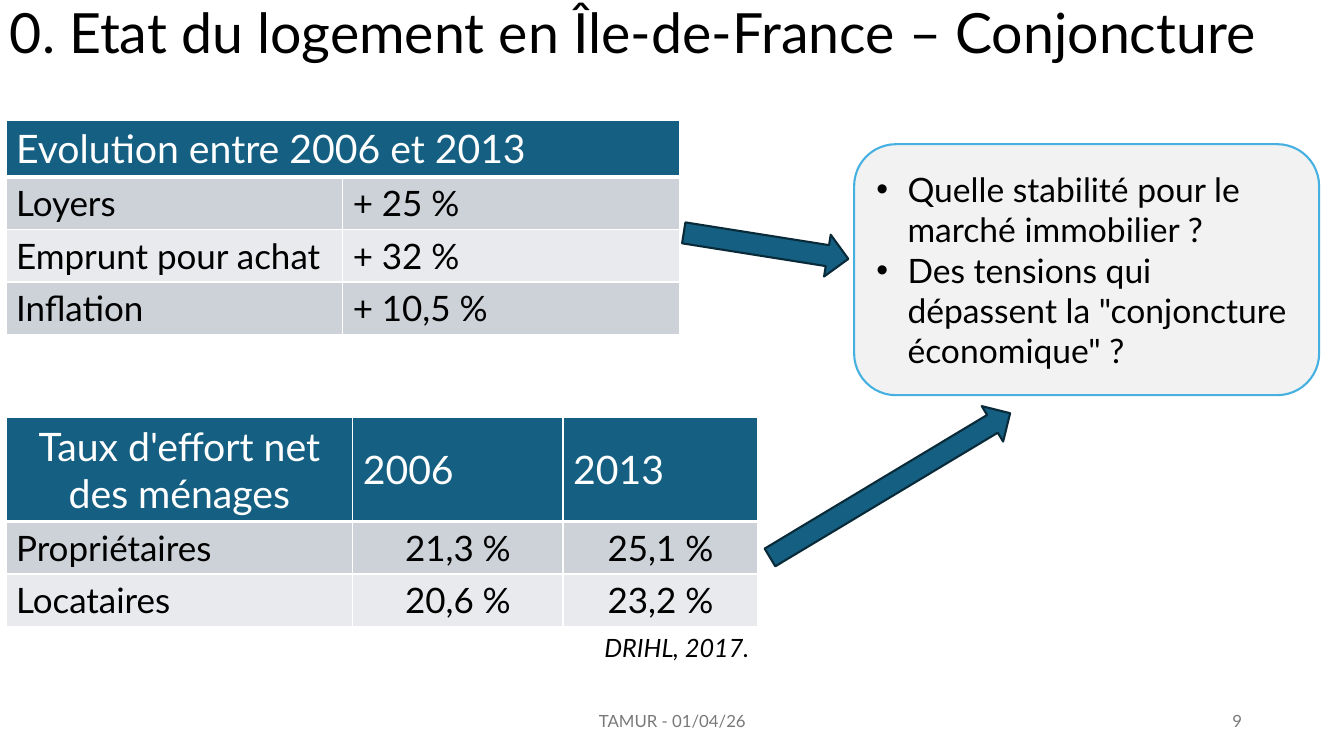
from lxml import etree
from pptx import Presentation
from pptx.dml.color import RGBColor
from pptx.enum import shapes, text
from pptx.oxml import ns
from pptx.util import Inches, Pt

COLORS = {
    "white": "FFFFFF", "black": "000000", "blue": "156082", "edge": "092A39",
    "dark_band": "CCD2D8", "light_band": "E8EAED", "grey": "797979",
    "panel": "F2F2F2", "sky": "46B1E1",
}
LEFT, CENTER, RIGHT = text.PP_ALIGN.LEFT, text.PP_ALIGN.CENTER, text.PP_ALIGN.RIGHT
TOP, MIDDLE = text.MSO_ANCHOR.TOP, text.MSO_ANCHOR.MIDDLE

deck = Presentation()
deck.slide_width, deck.slide_height = Inches(13.33), Inches(7.5)
page = deck.slides.add_slide(deck.slide_layouts[6])


def place(left, top, width, height):
    across, down = deck.slide_width / 100, deck.slide_height / 100
    return [int(share * side) for share, side in
            zip((left, top, width, height), (across, down, across, down))]


def write(frame, content, size=12, color="black", align=LEFT, anchor=TOP,
          italic=False, bullet=False, spacing=None):
    frame.word_wrap = True
    frame.vertical_anchor = anchor
    for index, line in enumerate(content.split("\n")):
        para = frame.paragraphs[0] if index == 0 else frame.add_paragraph()
        para.alignment = align
        if spacing:
            para.line_spacing = spacing
        if bullet:
            settings = para._p.get_or_add_pPr()
            settings.set("marL", str(Inches(0.31)))
            settings.set("indent", str(-Inches(0.31)))
            etree.SubElement(settings, ns.qn("a:buFont")).set("typeface", "Arial")
            etree.SubElement(settings, ns.qn("a:buChar")).set("char", "•")
        span = para.add_run()
        span.text = line
        span.font.name = "Lato"
        span.font.size = Pt(size)
        span.font.italic = italic
        span.font.color.rgb = RGBColor.from_string(COLORS[color])


labels = [
    ((0, 0.13, 99.9, 9.07), "0. Etat du logement en Île-de-France – Conjoncture",
     dict(size=39.6, anchor=MIDDLE, spacing=0.9)),
    ((70.65, 92.67, 22.5, 5.33), "9", dict(color="grey", align=RIGHT, anchor=MIDDLE)),
    ((33.15, 92.67, 33.75, 5.33), "TAMUR - 01/04/26",
     dict(color="grey", align=CENTER, anchor=MIDDLE)),
    ((43.3, 82.93, 13.2, 5.47), "DRIHL, 2017.", dict(size=18, align=RIGHT, italic=True)),
]
for area, content, style in labels:
    box = page.shapes.add_textbox(*place(*area))
    write(box.text_frame, content, **style)

tables = [
    dict(top=15.87, columns=[25.05, 25.05], header=7.47, anchor=TOP,
         first=LEFT, values=LEFT, merged=True,
         rows=[["Evolution entre 2006 et 2013", ""],
               ["Loyers", "+ 25 %"],
               ["Emprunt pour achat", "+ 32 %"],
               ["Inflation", "+ 10,5 %"]]),
    dict(top=55.2, columns=[25.8, 15.65, 14.5], header=13.73, anchor=MIDDLE,
         first=CENTER, values=CENTER, merged=False,
         rows=[["Taux d'effort net des ménages", "2006", "2013"],
               ["Propriétaires", "21,3 %", "25,1 %"],
               ["Locataires", "20,6 %", "23,2 %"]]),
]
BODY_ROW = 6.93
for plan in tables:
    rows, columns = plan["rows"], plan["columns"]
    height = plan["header"] + BODY_ROW * (len(rows) - 1)
    area = place(0.45, plan["top"], sum(columns), height)
    table = page.shapes.add_table(len(rows), len(columns), *area).table
    for column, share in zip(table.columns, columns):
        column.width = int(deck.slide_width * share / 100)
    for r, values in enumerate(rows):
        share = BODY_ROW if r else plan["header"]
        table.rows[r].height = int(deck.slide_height * share / 100)
        for c, value in enumerate(values):
            cell = table.cell(r, c)
            cell.vertical_anchor = TOP if r else plan["anchor"]
            fill = ("dark_band" if r % 2 else "light_band") if r else "blue"
            if value:
                align = plan["values"] if r and c else LEFT
                if r == 0 and c == 0:
                    align = plan["first"]
                write(cell.text_frame, value, size=25 if r else 28,
                      color="black" if r else "white", align=align,
                      anchor=None)
            settings = cell._tc.get_or_add_tcPr()
            for side in ("lnL", "lnR", "lnT", "lnB"):
                thick = (r == 0 and side == "lnB") or (r == 1 and side == "lnT")
                border = etree.SubElement(settings, ns.qn("a:" + side))
                border.set("w", str(Pt(3 if thick else 1)))
                paint = etree.SubElement(border, ns.qn("a:solidFill"))
                etree.SubElement(paint, ns.qn("a:srgbClr")).set("val", COLORS["white"])
            cell.fill.solid()
            cell.fill.fore_color.rgb = RGBColor.from_string(COLORS[fill])
            cell.vertical_anchor = TOP if r else plan["anchor"]
    if plan["merged"]:
        table.cell(0, 0).merge(table.cell(0, len(columns) - 1))

kinds = shapes.MSO_SHAPE
questions = ("Quelle stabilité pour le marché immobilier ?\n"
             "Des tensions qui dépassent la \"conjoncture économique\" ?")
figures = [
    (kinds.ROUNDED_RECTANGLE, (63.55, 19.07, 34.6, 33.2), 0, "panel", "sky", questions),
    (kinds.RIGHT_ARROW, (55.8, 61.47, 20.85, 5.47), 329, "blue", "edge", ""),
    (kinds.RIGHT_ARROW, (50.8, 29.73, 12.4, 5.6), 9, "blue", "edge", ""),
]
for kind, area, angle, fill, line, content in figures:
    figure = page.shapes.add_shape(kind, *place(*area))
    figure.rotation = angle
    figure.shadow.inherit = False
    figure.fill.solid()
    figure.fill.fore_color.rgb = RGBColor.from_string(COLORS[fill])
    figure.line.color.rgb = RGBColor.from_string(COLORS[line])
    figure.line.width = Pt(1.5)
    if content:
        write(figure.text_frame, content, size=24, anchor=MIDDLE, bullet=True)

deck.save("out.pptx")
